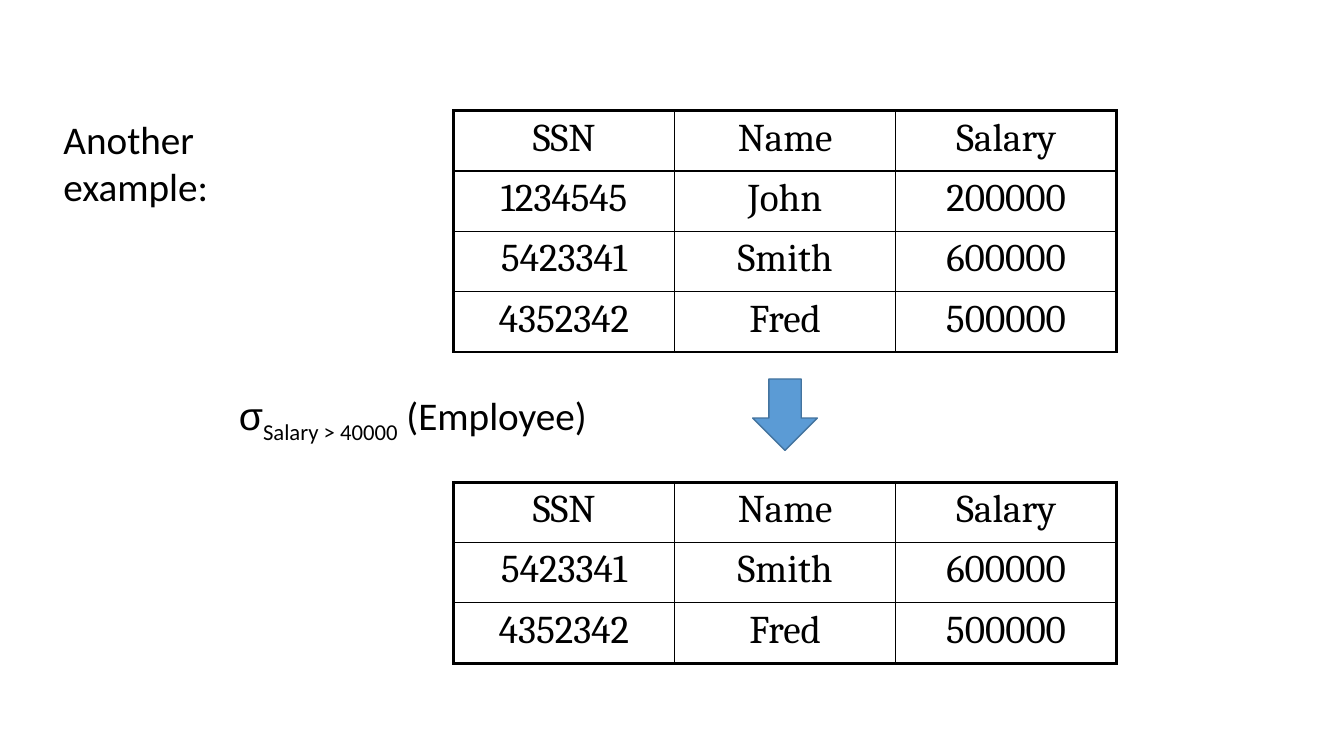
import pptx
import pptx.dml.color
import pptx.enum.shapes
import pptx.enum.text
import pptx.oxml
import pptx.oxml.ns
import pptx.util
from pptx.util import Cm

BLACK = "000000"
THIN, THICK = 1, 2.25
HEADER = ("SSN", "Name", "Salary")
JOHN = ("1234545", "John", "200000")
SMITH = ("5423341", "Smith", "600000")
FRED = ("4352342", "Fred", "500000")
TABLE_LEFT, COL_WIDTH, ROW_HEIGHT = 11.43, 5.57, 1.52


def rgb(value):
    return pptx.dml.color.RGBColor.from_string(value)


def add_run(p, text, font="Calibri", baseline=None):
    r = p.add_run()
    r.text = text
    r.font.color.rgb = rgb(BLACK)
    for name, value in {"name": font, "size": pptx.util.Pt(28), "bold": False}.items():
        setattr(r.font, name, value)
    if baseline is not None:
        r._r.get_or_add_rPr().set("baseline", str(baseline))


def add_text(slide, left, top, width, height, runs):
    tf = slide.shapes.add_textbox(Cm(left), Cm(top), Cm(width), Cm(height)).text_frame
    tf.word_wrap = True
    tf.auto_size = pptx.enum.text.MSO_AUTO_SIZE.SHAPE_TO_FIT_TEXT
    for run in runs:
        add_run(tf.paragraphs[0], *run)


def set_border(cell, side, width):
    ns = pptx.oxml.ns.nsdecls("a")
    cell._tc.get_or_add_tcPr().append(pptx.oxml.parse_xml(
        f'<a:ln{side} {ns} w="{pptx.util.Pt(width)}"><a:solidFill>'
        f'<a:srgbClr val="{BLACK}"/></a:solidFill></a:ln{side}>'))


def add_table(slide, top, rows):
    n_rows, n_cols = len(rows), len(HEADER)
    table = slide.shapes.add_table(
        n_rows, n_cols, Cm(TABLE_LEFT), Cm(top),
        Cm(COL_WIDTH * n_cols), Cm(ROW_HEIGHT * n_rows)).table
    table.first_row = table.horz_banding = False
    for i, row in enumerate(rows):
        for j, text in enumerate(row):
            cell = table.cell(i, j)
            p = cell.text_frame.paragraphs[0]
            p.alignment = pptx.enum.text.PP_ALIGN.CENTER
            add_run(p, text, "Cambria")
            outer = {"L": j == 0, "R": j == n_cols - 1,
                     "T": i == 0, "B": i == n_rows - 1}
            for side, is_outer in outer.items():
                set_border(cell, side, THICK if is_outer else THIN)
            cell.fill.background()


def add_down_arrow(slide, left, top, width, height):
    sp = slide.shapes.add_shape(pptx.enum.shapes.MSO_SHAPE.DOWN_ARROW,
                                Cm(left), Cm(top), Cm(width), Cm(height))
    sp.shadow.inherit = False
    sp.fill.solid()
    sp.fill.fore_color.rgb = rgb("5B9BD5")
    sp.line.color.rgb = rgb("43739E")
    sp.line.width = pptx.util.Pt(1)


def main():
    prs = pptx.Presentation()
    prs.slide_width, prs.slide_height = Cm(33.87), Cm(19.05)
    slide = prs.slides.add_slide(prs.slide_layouts[6])
    add_text(slide, 5.77, 9.73, 9.88, 1.45, [
        ("σ", "Arial"),
        ("Salary > 40000", "Calibri", -25000),
        (" (Employee)",),
    ])
    add_table(slide, 2.79, [HEADER, JOHN, SMITH, FRED])
    add_table(slide, 12.15, [HEADER, SMITH, FRED])
    add_text(slide, 1.35, 2.79, 7.4, 1.45, [("Another example:",)])
    add_down_arrow(slide, 18.97, 9.55, 1.63, 1.8)
    prs.save("out.pptx")


if __name__ == "__main__":
    main()
